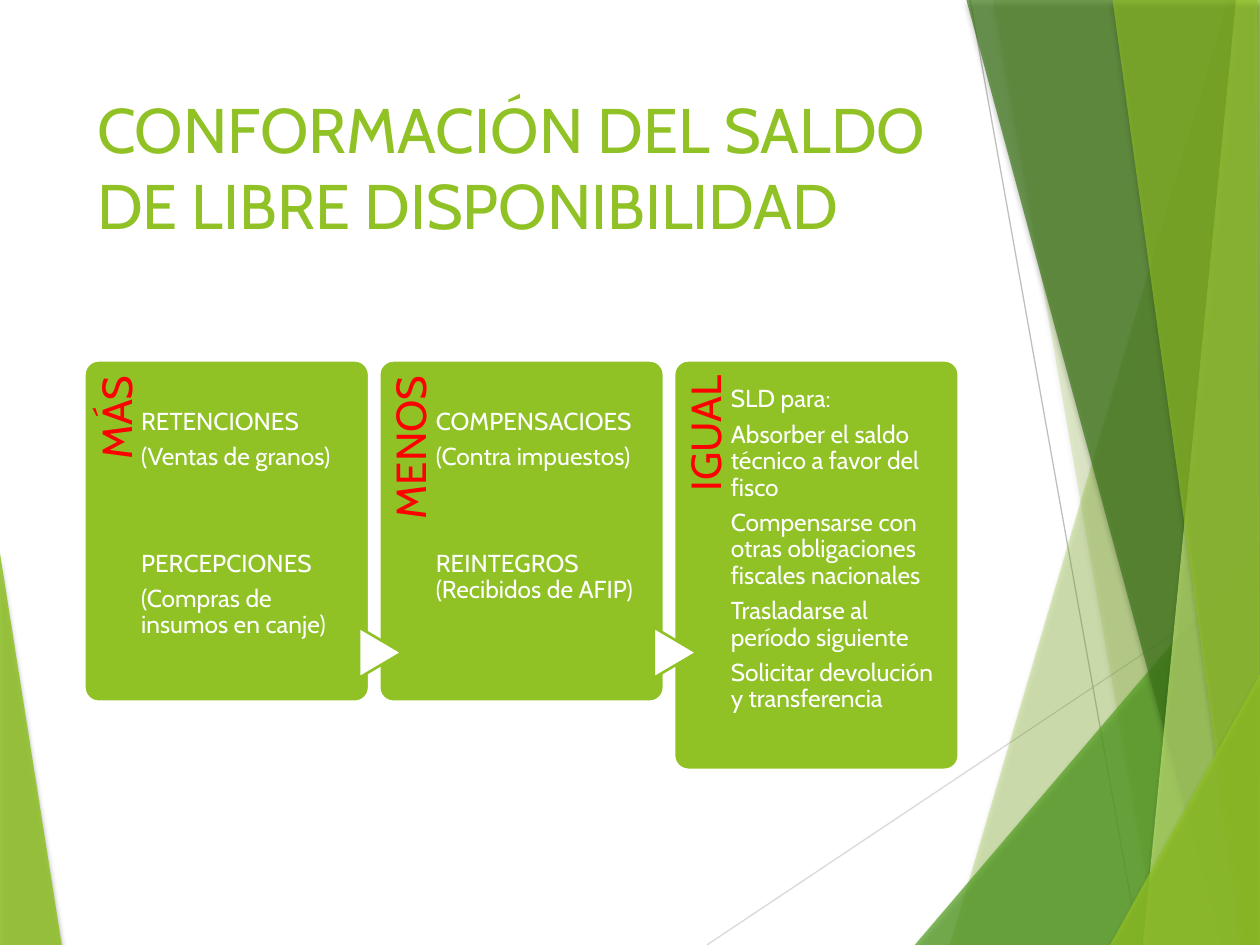
from lxml import etree
from pptx import Presentation
from pptx import util as u
from pptx.dml.color import RGBColor
from pptx.enum import shapes, text
from pptx.oxml.ns import qn

LIME, GREEN, DARK, PALE = "90C226", "54A021", "3F7819", "C0E474"
WHITE, RED = "FFFFFF", "FF0000"
COLS, ROWS = 10, 7.5


def rgb(code):
    return RGBColor.from_string(code)


def sub(node, tag, **attrs):
    return etree.SubElement(node, qn(tag), attrs)


class Deck:
    font = "Cabin"

    def __init__(self):
        self.prs = Presentation()
        self.prs.slide_width, self.prs.slide_height = u.Inches(10), u.Inches(7.5)
        self.slide = self.prs.slides.add_slide(self.prs.slide_layouts[5])
        self.items = self.slide.shapes

    def x(self, cols):
        return round(self.prs.slide_width * cols / COLS)

    def y(self, rows):
        return round(self.prs.slide_height * rows / ROWS)

    def area(self, left, top, wide, high):
        return self.x(left), self.y(top), self.x(wide), self.y(high)

    def style(self, para, size, color):
        font = para.font
        font.name, font.size, font.color.rgb = self.font, u.Pt(size), rgb(color)

    def title(self, words, *box):
        item = self.items.title
        item.left, item.top, item.width, item.height = self.area(*box)
        self.items.element.append(item.element)  # in front of the facets
        item.text_frame.text = words
        item.text_frame.vertical_anchor = text.MSO_ANCHOR.TOP
        para = item.text_frame.paragraphs[0]
        para.alignment = text.PP_ALIGN.LEFT
        self.style(para, 36, LIME)

    def facet(self, color, alpha, points):
        spots = [(self.x(a), self.y(b)) for a, b in points]
        form = self.items.build_freeform(*spots[0])
        form.add_line_segments(spots[1:], close=True)
        item = form.convert_to_shape()
        item.fill.solid()
        item.fill.fore_color.rgb = rgb(color)
        item.line.fill.background()
        tone = item.element.spPr.find(qn("a:solidFill"))[0]
        sub(tone, "a:alpha", val=str(alpha * 1000))
        # Soft shadow below the facet
        glow = sub(item.element.spPr, "a:effectLst")
        shade = sub(glow, "a:outerShdw", blurRad=str(u.Pt(3)),
                    dist=str(u.Pt(2)), dir="5400000", rotWithShape="0")
        tone = sub(shade, "a:srgbClr", val="000000")
        sub(tone, "a:alpha", val="35000")

    def line(self, color, start, end):
        item = self.items.add_connector(
            shapes.MSO_CONNECTOR.STRAIGHT, self.x(start[0]), self.y(start[1]),
            self.x(end[0]), self.y(end[1]))
        item.line.color.rgb, item.line.width = rgb(color), u.Pt(0.75)
        sub(item.element.spPr, "a:effectLst")

    def shape(self, kind, fill, edge, *box):
        item = self.items.add_shape(kind, *self.area(*box))
        item.shadow.inherit = False
        item.fill.solid()
        item.fill.fore_color.rgb = rgb(fill)
        item.line.color.rgb, item.line.width = rgb(edge), u.Pt(1.5)
        return item

    def text(self, groups, size, color, box, pad, align=text.PP_ALIGN.LEFT):
        """Each group is a list of paragraphs; a wide gap divides the groups."""
        item = self.items.add_textbox(*self.area(*box))
        frame = item.text_frame
        frame.word_wrap = True
        frame.margin_left = frame.margin_bottom = 0
        frame.margin_top, frame.margin_right = self.y(pad[0]), self.x(pad[1])
        rows = [(words, bool(g) and not n)
                for g, group in enumerate(groups) for n, words in enumerate(group)]
        for n, (words, apart) in enumerate(rows):
            para = frame.add_paragraph() if n else frame.paragraphs[0]
            para.text, para.alignment = words, align
            para.line_spacing = 0.9
            para.space_after = u.Pt(5)
            if apart:
                para.space_before = u.Pt(40.5)
            self.style(para, size, color)
        return item

    def card(self, left, top, high, label, groups, pad):
        wide, strip, run = 2.26, 0.45, high * 0.82
        item = self.shape(shapes.MSO_SHAPE.ROUNDED_RECTANGLE, LIME, WHITE,
                          left, top, wide, high)
        item.adjustments[0] = 0.05
        # Upright label, turned about its own centre
        box = (left + (strip - run) / 2, top + (run - strip) / 2, run, strip)
        self.text([[label]], 24, RED, box, (0.09, 0.12),
                  text.PP_ALIGN.RIGHT).rotation = 270
        self.text(groups, 14, WHITE, (left + strip, top, 1.68, high), (pad, 0))

    def arrow(self, left, top):
        item = self.shape(shapes.MSO_SHAPE.FLOWCHART_EXTRACT, WHITE, LIME,
                          left, top, 0.4, 0.34)
        item.rotation = 90


FACETS = [
    (LIME, 30, [(9.75, 0), (7.54, 7.5), (10, 7.5), (10, 0)]),
    (LIME, 20, [(7.88, 0), (9.19, 7.5), (10, 7.5), (10, 0)]),
    (GREEN, 72, [(7.26, 7.5), (10, 4.29), (10, 7.5)]),
    (DARK, 70, [(7.67, 0), (9.7, 7.5), (10, 7.5), (10, 0)]),
    (PALE, 70, [(9.81, 0), (9.07, 7.5), (10, 7.5), (10, 0)]),
    (LIME, 65, [(8.83, 0), (9.86, 7.5), (10, 7.5), (9.98, 0)]),
    (LIME, 80, [(8.81, 7.5), (10, 5.35), (10, 7.5)]),
]

# Label, height, top padding, groups of paragraphs
CARDS = [
    ("MÁS", 2.71, 0.39, [
        ["RETENCIONES", "(Ventas de granos)"],
        ["PERCEPCIONES", "(Compras de insumos en canje)"]]),
    ("MENOS", 2.71, 0.39, [
        ["COMPENSACIOES", "(Contra impuestos)"],
        ["REINTEGROS (Recibidos de AFIP)"]]),
    ("IGUAL", 3.25, 0.21, [
        ["SLD para:",
         "Absorber el saldo técnico a favor del fisco",
         "Compensarse con otras obligaciones fiscales nacionales",
         "Trasladarse al período siguiente",
         "Solicitar devolución y transferencia"]]),
]


def main():
    deck = Deck()

    # Backdrop
    deck.facet(LIME, 85, [(0, 4.39), (0.49, 7.5), (0, 7.5)])
    deck.line("D9D9D9", (5.61, 7.5), (10, 4.57))
    deck.line("BFBFBF", (7.7, 0), (9.04, 7.5))
    for facet in FACETS:
        deck.facet(*facet)

    deck.title("CONFORMACIÓN DEL SALDO DE LIBRE DISPONIBILIDAD",
               0.67, 0.67, 6.94, 1.44)

    # Cards, with an arrow over each gap
    edge, top, step = 0.67, 2.86, 2.34
    for n, (label, high, pad, groups) in enumerate(CARDS):
        left = edge + n * step
        deck.card(left, top, high, label, groups, pad)
        if n:
            deck.arrow(left - 0.19, top + 2.15)

    deck.prs.save("out.pptx")


if __name__ == "__main__":
    main()
